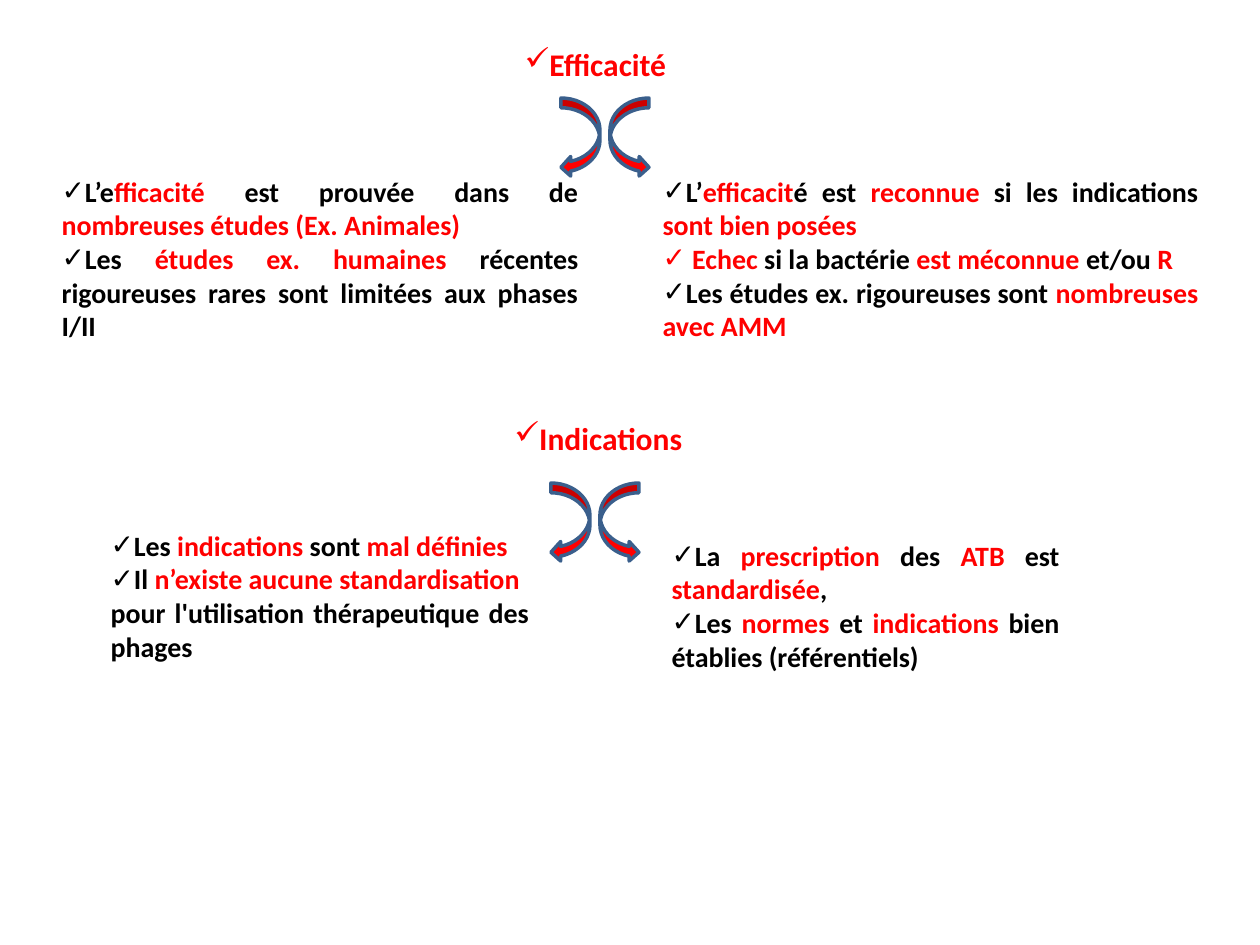
from lxml.etree import SubElement
from pptx import Presentation
from pptx.dml.color import RGBColor
from pptx.enum.shapes import MSO_SHAPE
from pptx.enum.text import MSO_ANCHOR, MSO_AUTO_SIZE, PP_ALIGN
from pptx.oxml.ns import qn
from pptx.util import Pt

PX = 914400 / 126
BLACK, RED, ARROW_LINE = "000000", "FF0000", "3A5F8C"
TICK = "✓"

# Within each paragraph, "|" switches between black and red.
SECTIONS = [
    {
        "heading": ("Efficacité", (512, 39, 169, 50)),
        "arrows": (561, 98),
        "lists": [
            ((49, 168, 542, 183), [
                (TICK, "L’e|fficacité| est prouvée dans de |nombreuses études (Ex. Animales)"),
                (TICK, "Les |études ex. humaines |récentes rigoureuses rares sont limitées aux phases I/II"),
            ]),
            ((650, 168, 561, 183), [
                (TICK, "L’|efficacit|é est |reconnue| si les indications |sont bien posées"),
                (TICK, "| Echec |si la bactérie |est méconnue |et/ou |R"),
                (TICK, "Les études ex. rigoureuses sont |nombreuses avec AMM"),
            ]),
        ],
    },
    {
        "heading": ("Indications", (502, 413, 194, 50)),
        "arrows": (551, 483),
        "lists": [
            ((98, 522, 444, 149), [
                (TICK, "Les |indications| sont |mal définies "),
                (TICK, "Il |n’existe aucune standardisation"),
                (None, "pour l'utilisation thérapeutique des phages"),
            ]),
            ((659, 532, 413, 149), [
                (TICK, "La |prescription| des |ATB| est |standardisée|,"),
                (TICK, "Les |normes| et |indications| bien établies (référentiels)"),
            ]),
        ],
    },
]
ARROW_WIDTH, ARROW_HEIGHT, ARROW_STEP = 39, 79, 49


def colour(value):
    return RGBColor.from_string(value)


def emu(box):
    return [round(length * PX) for length in box]


def apply(target, values):
    for name, value in values.items():
        setattr(target, name, value)


def write(shape, box, paragraphs, size, alignment, wrap):
    apply(shape, dict(zip(("left", "top", "width", "height"), emu(box))))
    frame = shape.text_frame
    apply(frame, {"word_wrap": wrap, "auto_size": MSO_AUTO_SIZE.SHAPE_TO_FIT_TEXT,
                  "vertical_anchor": MSO_ANCHOR.TOP})
    for index, (bullet, text) in enumerate(paragraphs):
        paragraph = frame.add_paragraph() if index else frame.paragraphs[0]
        apply(paragraph, {"alignment": alignment, "space_before": Pt(0), "line_spacing": 1.0})
        properties = paragraph._p.get_or_add_pPr()
        apply_indent = {"marL": "0", "indent": "0"}
        properties.attrib.update(apply_indent)
        if bullet:
            SubElement(properties, qn("a:buChar")).set("char", bullet)
        else:
            SubElement(properties, qn("a:buNone"))
        for part, words in enumerate(text.split("|")):
            if words:
                run = paragraph.add_run()
                run.text = words
                apply(run.font, {"name": "Calibri", "size": Pt(size), "bold": True})
                run.font.color.rgb = colour(RED if part % 2 else BLACK)


def add_arrows(slide, left, top):
    for index, kind in enumerate((MSO_SHAPE.CURVED_LEFT_ARROW, MSO_SHAPE.CURVED_RIGHT_ARROW)):
        box = (left + index * ARROW_STEP, top, ARROW_WIDTH, ARROW_HEIGHT)
        arrow = slide.shapes.add_shape(kind, *emu(box))
        arrow.shadow.inherit = False
        arrow.fill.solid()
        arrow.fill.fore_color.rgb = colour(RED)
        arrow.line.color.rgb = colour(ARROW_LINE)
        arrow.line.width = Pt(2)


def main():
    presentation = Presentation()
    presentation.slide_width, presentation.slide_height = emu((1260, 945))
    comparison = presentation.slide_layouts.get_by_name("Comparison")
    slide = presentation.slides.add_slide(comparison)
    title, *bodies = slide.placeholders
    bodies = iter(bodies)
    for index, section in enumerate(SECTIONS):
        text, box = section["heading"]
        heading = slide.shapes.add_textbox(*emu(box)) if index else title
        write(heading, box, [(TICK, "|" + text)], 18, PP_ALIGN.LEFT, False)
        for box, paragraphs in section["lists"]:
            write(next(bodies), box, paragraphs, 16, PP_ALIGN.JUSTIFY, True)
        add_arrows(slide, *section["arrows"])
    presentation.save("out.pptx")


if __name__ == "__main__":
    main()
